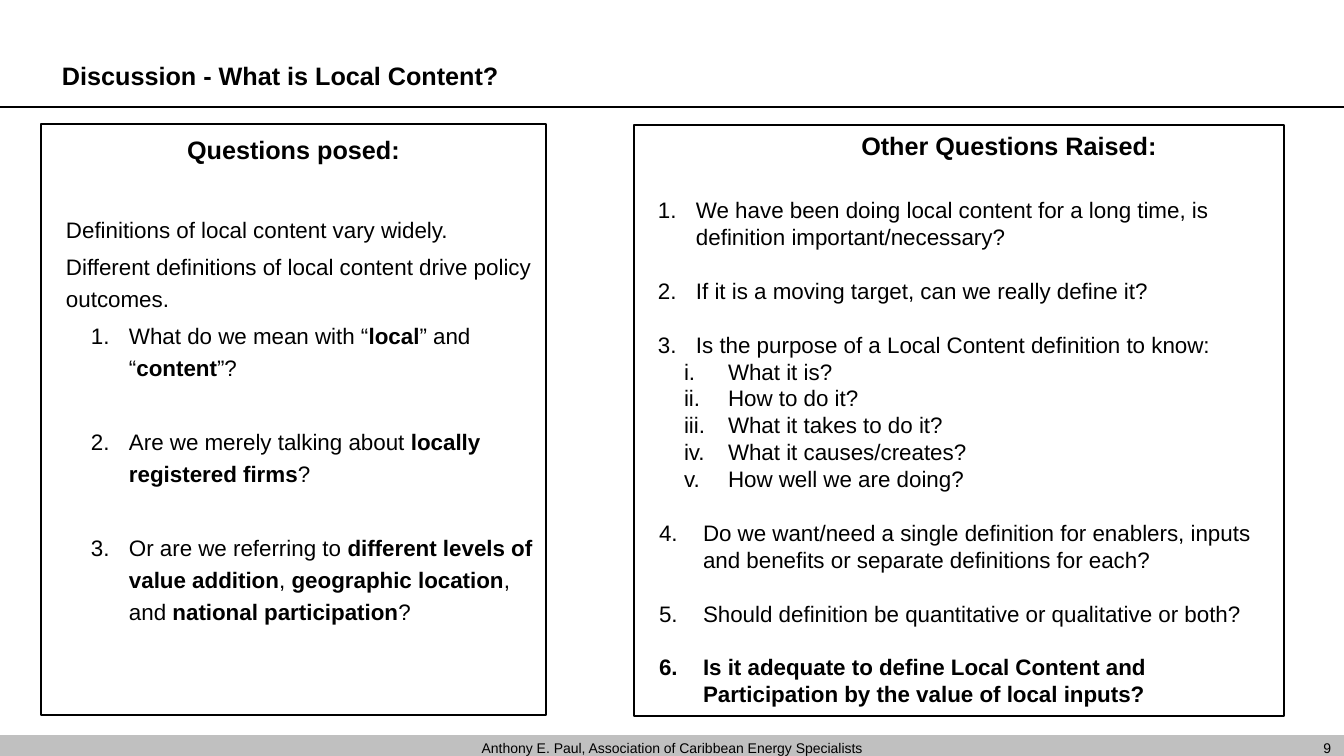
from dataclasses import dataclass

from lxml import etree
from pptx import Presentation
from pptx.dml.color import RGBColor
from pptx.enum.shapes import MSO_CONNECTOR as Connector, MSO_SHAPE as Shape
from pptx.enum.text import MSO_ANCHOR as Anchor, PP_ALIGN as Align
from pptx.oxml.ns import qn
from pptx.util import Emu, Pt

PX = 914400 / 100.8  # EMU in one px


@dataclass(frozen=True)
class Theme:
    font: str = "Arial"
    ink: str = "000000"
    paper: str = "FFFFFF"
    backdrop: str = "C0C0C0"
    heading: int = 18
    body: int = 16
    footer: int = 10
    rule: float = 1
    frame: float = 1.5


THEME = Theme()


def px(n):
    return Emu(round(n * PX))


def rgb(value):
    return RGBColor.from_string(value)


# Shapes
def add_panel(s, box, fill=None, framed=False):
    sp = s.shapes.add_shape(Shape.RECTANGLE, *map(px, box))
    sp.shadow.inherit = False
    if fill:
        sp.fill.solid()
        sp.fill.fore_color.rgb = rgb(fill)
    else:
        sp.fill.background()
    if framed:
        sp.line.color.rgb = rgb(THEME.ink)
        sp.line.width = Pt(THEME.frame)
    else:
        sp.line.fill.background()
    return sp


def add_rule(s, y, width):
    line = s.shapes.add_connector(Connector.STRAIGHT, 0, px(y), px(width), px(y))
    line.line.color.rgb = rgb(THEME.ink)
    line.line.width = Pt(THEME.rule)
    etree.SubElement(line._element.spPr, qn("a:effectLst"))


def set_frame(sp, anchor=Anchor.TOP, side=0, top=5, bottom=5):
    tf = sp.text_frame
    tf.word_wrap = True
    tf.vertical_anchor = anchor
    tf.margin_left = tf.margin_right = px(side)
    tf.margin_top, tf.margin_bottom = px(top), px(bottom)
    return tf


# Text: parts between asterisks are bold
def add_text(tf, text, size=THEME.body, bold=False, align=Align.LEFT, level=0,
             indent=0, hang=0, number=None, spacing=None, before=0):
    p = tf.paragraphs[0]
    if p.runs:
        p = tf.add_paragraph()
    p.alignment, p.level = align, level
    pPr = p._p.get_or_add_pPr()
    pPr.set("marL", str(px(indent)))
    pPr.set("indent", str(px(-hang)))
    if spacing:
        p.line_spacing = spacing
    if before:
        p.space_before = px(before)
    if number:
        color = etree.SubElement(pPr, qn("a:buClr"))
        etree.SubElement(color, qn("a:srgbClr"), val=THEME.ink)
        etree.SubElement(pPr, qn("a:buFont"), typeface="+mj-lt")
        etree.SubElement(pPr, qn("a:buAutoNum"), type=number)
    else:
        etree.SubElement(pPr, qn("a:buNone"))
    for i, part in enumerate(text.split("*")):
        if part:
            r = p.add_run()
            r.text = part
            r.font.name, r.font.size = THEME.font, Pt(size)
            r.font.bold = bold or i % 2 == 1
            r.font.color.rgb = rgb(THEME.ink)


def add_label(s, box, text, side=10, bottom=0, top=5, **fmt):
    sp = s.shapes.add_textbox(*map(px, box))
    add_text(set_frame(sp, Anchor.BOTTOM, side, top, bottom), text, **fmt)


# Question panels
def add_questions(s, box, heading, items, leading, heading_indent=0):
    tf = set_frame(add_panel(s, box, framed=True))
    add_text(tf, heading, size=THEME.heading, bold=True, align=Align.CENTER,
             indent=heading_indent, spacing=Pt(THEME.heading * leading))
    for text, before, style in items:
        add_text(tf, text, before=before, spacing=Pt(THEME.body * leading), **style)


PLAIN = dict(level=1, indent=25)
POSED = dict(level=2, indent=88, hang=38, number="arabicPeriod")
RAISED = dict(level=1, indent=62, hang=38, number="arabicPeriod")
RAISED_WIDE = dict(RAISED, indent=69, hang=44)
ROMAN = dict(level=2, indent=94, hang=44, number="romanLcPeriod")

POSED_ITEMS = [
    ("Definitions of local content vary widely.", 46, PLAIN),
    ("Different definitions of local content drive policy outcomes.", 5, PLAIN),
    ("What do we mean with “*local*” and “*content*”?", 5, POSED),
    ("Are we merely talking about *locally registered firms*?", 42, POSED),
    ("Or are we referring to *different levels of value addition*, "
     "*geographic location*, and *national participation*?", 42, POSED),
]

RAISED_ITEMS = [
    ("We have been doing local content for a long time, "
     "is definition important/necessary?", 36, RAISED),
    ("If it is a moving target, can we really define it?", 27, RAISED),
    ("Is the purpose of a Local Content definition to know:", 27, RAISED),
    ("What it is?", 0, ROMAN),
    ("How to do it?", 0, ROMAN),
    ("What it takes to do it?", 0, ROMAN),
    ("What it causes/creates?", 0, ROMAN),
    ("How well we are doing?", 0, ROMAN),
    ("Do we want/need a single definition for enablers, inputs "
     "and benefits or separate definitions for each?", 27, RAISED_WIDE),
    ("Should definition be quantitative or qualitative or both?", 27, RAISED_WIDE),
    ("*Is it adequate to define Local Content and Participation "
     "by the value of local inputs?*", 27, RAISED_WIDE),
]


def main():
    prs = Presentation()
    prs.slide_width, prs.slide_height = px(1344), px(756)
    s = prs.slides.add_slide(prs.slide_layouts[6])

    # Backdrop
    s.background.fill.solid()
    s.background.fill.fore_color.rgb = rgb(THEME.backdrop)
    add_panel(s, (0, 145, 1344, 590), fill=THEME.paper)
    add_panel(s, (0, 0, 1344, 146), fill=THEME.paper)
    add_rule(s, 107, 1344)

    # Title
    add_label(s, (62, 27, 1220, 64), "Discussion - What is Local Content?",
              side=0, top=0, size=THEME.heading, bold=True, spacing=1.2)

    # Panels
    add_questions(s, (41, 124, 505, 591), "Questions posed:", POSED_ITEMS, 1.43)
    add_questions(s, (634, 125, 650, 591), "Other Questions Raised:",
                  RAISED_ITEMS, 1.2, heading_indent=100)

    # Footer
    add_label(s, (426, 733, 492, 23),
              "Anthony E. Paul, Association of Caribbean Energy Specialists",
              size=THEME.footer, align=Align.CENTER, spacing=0.7)
    add_label(s, (1263, 715, 78, 41), "9",
              size=THEME.footer, align=Align.RIGHT, spacing=0.7)

    prs.save("out.pptx")


if __name__ == "__main__":
    main()
